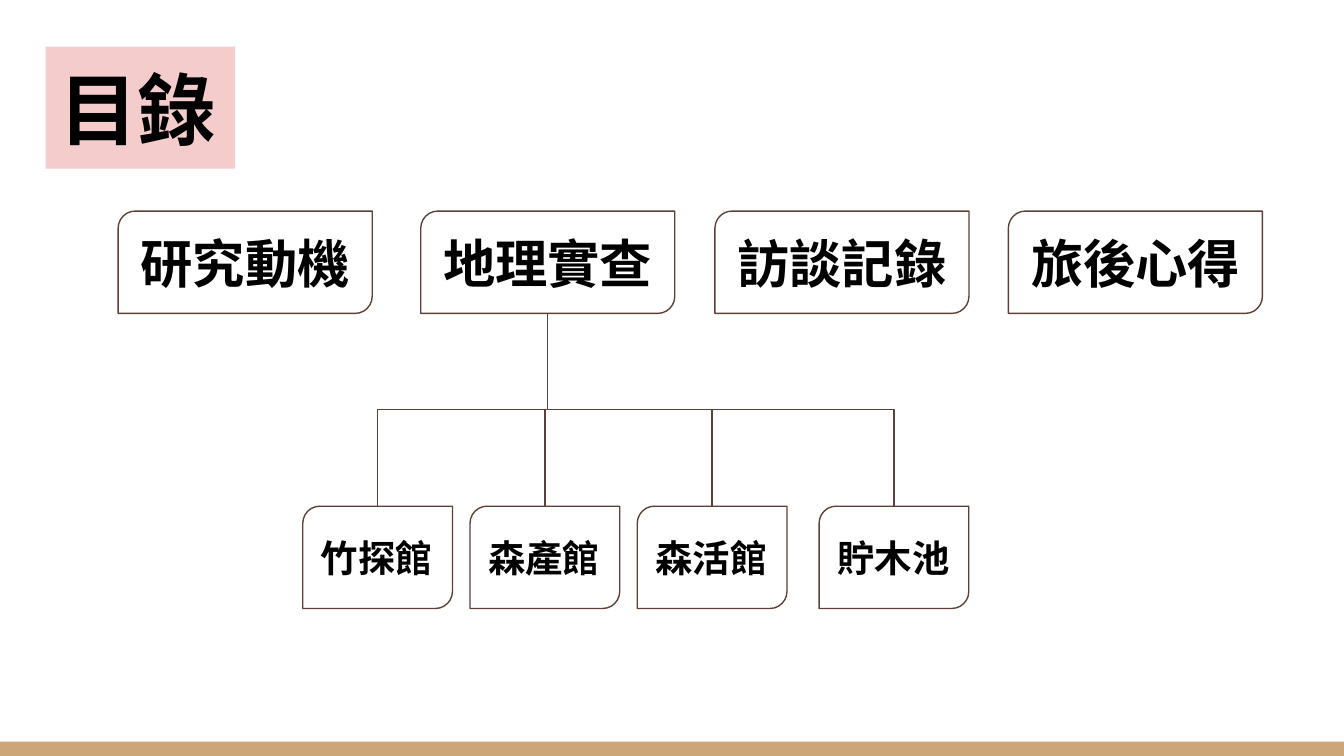
from lxml.etree import SubElement
from pptx import Presentation
from pptx.dml.color import RGBColor
from pptx.enum.shapes import MSO_CONNECTOR, MSO_SHAPE
from pptx.enum.text import MSO_ANCHOR, MSO_AUTO_SIZE, PP_ALIGN
from pptx.oxml.ns import qn
from pptx.util import Pt

COLORS = {"text": "000000", "line": "5D4037", "title": "F4CCCC", "bar": "CCA677"}
FONT = "Noto Sans CJK TC"
BOX_HEIGHT = 54.8
TOPICS = {"研究動機": 63.3, "地理實查": 225.4, "訪談記錄": 383, "旅後心得": 540.2}
SITES = {"竹探館": 162.2, "森產館": 251.8, "森活館": 341.4, "貯木池": 438.8}
BOTTOM_SITE, TOP_SITE = 1, 3


def color(name):
    return RGBColor.from_string(COLORS[name])


def set_attrs(obj, values):
    for name, value in values.items():
        setattr(obj, name, value)


def place(sp, left, top, width, height):
    set_attrs(sp, {"left": Pt(left), "top": Pt(top),
                   "width": Pt(width), "height": Pt(height)})


def fill_shape(sp, name):
    sp.fill.solid()
    sp.fill.fore_color.rgb = color(name)


def write(sp, text, size, align, anchor):
    tf = sp.text_frame
    margins = dict.fromkeys(
        ("margin_left", "margin_top", "margin_right", "margin_bottom"), Pt(7.2))
    set_attrs(tf, {"word_wrap": True, "auto_size": MSO_AUTO_SIZE.NONE,
                   "vertical_anchor": anchor, **margins})
    p = tf.paragraphs[0]
    p.alignment = align
    r = p.add_run()
    r.text = text
    set_attrs(r.font, {"name": FONT, "size": Pt(size), "bold": True})
    r.font.color.rgb = color("text")
    SubElement(r.font._element, qn("a:ea"), typeface=FONT)


def add_title(s, text):
    sp = s.shapes.title
    place(sp, 24.5, 25, 101.5, 65.3)
    fill_shape(sp, "title")
    write(sp, text, 42, PP_ALIGN.LEFT, MSO_ANCHOR.BOTTOM)


def add_bar(s):
    sp = s.shapes.add_shape(MSO_SHAPE.RECTANGLE, 0, Pt(397.3), Pt(720), Pt(7.7))
    sp.shadow.inherit = False
    fill_shape(sp, "bar")
    sp.line.fill.background()


def add_box(s, text, left, top, width, size, align):
    sp = s.shapes.add_shape(MSO_SHAPE.ROUND_2_DIAG_RECTANGLE,
                            Pt(left), Pt(top), Pt(width), Pt(BOX_HEIGHT))
    sp.shadow.inherit = False
    sp.adjustments[0] = 0.167
    sp.fill.background()
    sp.line.color.rgb = color("line")
    sp.line.width = Pt(0.75)
    write(sp, text, size, align, MSO_ANCHOR.MIDDLE)
    return sp


def add_branch(s, parent, child):
    """Join parent bottom to child top by an elbow turned to run downwards."""
    x1, y1 = parent.left + parent.width // 2, parent.top + parent.height
    x2, y2 = child.left + child.width // 2, child.top
    cxn = s.shapes.add_connector(MSO_CONNECTOR.ELBOW, x1, y1, x2, y2)
    cxn.begin_connect(parent, BOTTOM_SITE)
    cxn.end_connect(child, TOP_SITE)
    drop, run = y2 - y1, abs(x2 - x1)
    set_attrs(cxn, {"left": (x1 + x2 - drop) // 2, "top": (y1 + y2 - run) // 2,
                    "width": drop, "height": run})
    rightward = x2 > x1
    xfrm = cxn._element.spPr.find(qn("a:xfrm"))
    for name, value in {"rot": "16200000" if rightward else "5400000",
                        "flipH": "1" if rightward else "0", "flipV": "0"}.items():
        xfrm.set(name, value)
    cxn.line.color.rgb = color("line")
    cxn.line.width = Pt(0.75)
    SubElement(cxn._element.spPr, qn("a:effectLst"))


def main():
    prs = Presentation()
    set_attrs(prs, {"slide_width": Pt(720), "slide_height": Pt(405)})
    s = prs.slides.add_slide(prs.slide_layouts[5])
    add_bar(s)
    add_title(s, "目錄")
    topics = {text: add_box(s, text, left, 113.1, 136.1, 28, PP_ALIGN.CENTER)
              for text, left in TOPICS.items()}
    for text, left in SITES.items():
        site = add_box(s, text, left, 271.2, 80.2, 20, PP_ALIGN.LEFT)
        add_branch(s, topics["地理實查"], site)
    prs.save("out.pptx")


if __name__ == "__main__":
    main()
